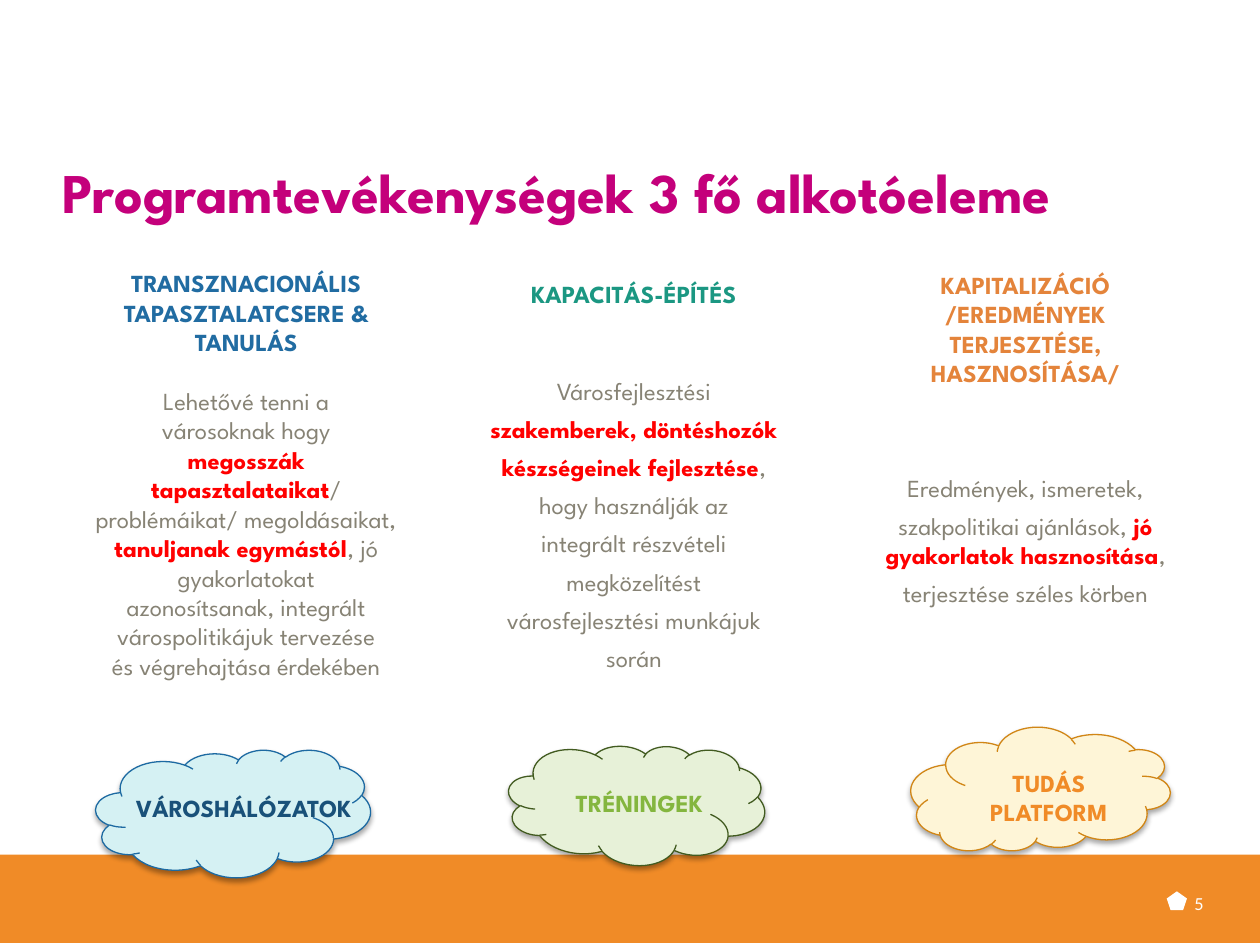
from typing import NamedTuple

from lxml import etree
from pptx import Presentation
from pptx.dml.color import RGBColor
from pptx.enum import shapes, text
from pptx.oxml import ns
from pptx.util import Cm, Pt

COLORS = {
    "orange": "F08B27", "white": "FFFFFF", "magenta": "C4007B",
    "grey": "878375", "red": "FF0000",
    "blue_head": "216CA2", "teal_head": "1B9782", "orange_head": "E4843B",
    "blue_fill": "D5F1F3", "blue_line": "1D6AA2", "blue_text": "195179",
    "green_fill": "E7F1D8", "green_line": "425B20", "green_text": "84B63F",
    "yellow_fill": "FEF5D7", "yellow_line": "D18616",
}
HEAD_FONT = "League Spartan"


class Box(NamedTuple):
    left: float
    top: float
    width: float
    height: float


class Column(NamedTuple):
    box: Box
    color: str
    heading: list[str]
    body: list[str]
    gap: float
    spacing: float


class Cloud(NamedTuple):
    box: Box
    rotation: float
    palette: str
    label_box: Box
    label: list[str]
    label_color: str
    wrap: bool


COLUMNS = [
    Column(Box(1.5, 5.28, 6.93, 9.75), "blue_head",
           ["TRANSZNACIONÁLIS", "TAPASZTALATCSERE &", "TANULÁS"],
           ["Lehetővé tenni a", "városoknak hogy", "*megosszák*",
            "*tapasztalataikat*/ problémáikat/ megoldásaikat,",
            "*tanuljanak egymástól*, jó", "gyakorlatokat",
            "azonosítsanak, integrált", "várospolitikájuk tervezése",
            "és végrehajtása érdekében"], 16.8, 0),
    Column(Box(9.4, 5.49, 6.76, 8.99), "teal_head",
           ["KAPACITÁS-ÉPÍTÉS"],
           ["Városfejlesztési", "*szakemberek, döntéshozók*",
            "*készségeinek fejlesztése*,", "hogy használják az",
            "integrált részvételi", "megközelítést",
            "városfejlesztési munkájuk", "során"], 38.6, 5),
    Column(Box(17.45, 5.31, 6.45, 9.17), "orange_head",
           ["KAPITALIZÁCIÓ", "/EREDMÉNYEK", "TERJESZTÉSE,", "HASZNOSÍTÁSA/"],
           ["Eredmények, ismeretek,",
            "szakpolitikai ajánlások, *jó gyakorlatok hasznosítása*,",
            "terjesztése széles körben"], 48.6, 5),
]

CLOUDS = [
    Cloud(Box(10.24, 14.99, 5.18, 2.44), 4.7, "green",
          Box(11.33, 15.75, 3.12, 0.86), ["TRÉNINGEK"], "green_text", False),
    Cloud(Box(18.36, 14.66, 5.23, 2.49), 180, "yellow",
          Box(19.1, 15.34, 4.09, 1.45), ["TUDÁS", "PLATFORM"], "orange", True),
    Cloud(Box(1.93, 15.11, 5.54, 2.57), 0, "blue",
          Box(2.36, 15.85, 5.11, 0.86), ["VÁROSHÁLÓZATOK"], "blue_text", False),
]


def rgb(name: str) -> RGBColor:
    return RGBColor.from_string(COLORS[name])


def place(box: Box) -> list[Cm]:
    return [Cm(v) for v in box]


def add_paragraph(tf, line: str, *, first: bool = False, size: float = 14,
                  font: str = HEAD_FONT, color: str = "grey", bold: bool = False,
                  align=text.PP_ALIGN.CENTER, before: float = 0) -> None:
    p = tf.paragraphs[0] if first else tf.add_paragraph()
    p.alignment = align
    p.space_before = Pt(before)
    for i, part in enumerate(line.split("*")):
        if part:
            marked = i % 2 == 1
            r = p.add_run()
            r.text = part
            r.font.size = Pt(size)
            r.font.name = font
            r.font.bold = bold or marked
            r.font.color.rgb = rgb("red" if marked else color)


def add_text(slide, box: Box, lines: list[str], *, wrap: bool = True,
             anchor=text.MSO_ANCHOR.TOP, insets=None, **fmt):
    tf = slide.shapes.add_textbox(*place(box)).text_frame
    tf.word_wrap = wrap
    tf.vertical_anchor = anchor
    if insets is not None:
        (tf.margin_left, tf.margin_top,
         tf.margin_right, tf.margin_bottom) = [Cm(v) for v in insets]
    for i, line in enumerate(lines):
        add_paragraph(tf, line, first=i == 0, **fmt)
    return tf


def add_shape(slide, kind, box: Box, fill: str, line: str | None = None):
    sp = slide.shapes.add_shape(kind, *place(box))
    sp.shadow.inherit = False
    sp.fill.solid()
    sp.fill.fore_color.rgb = rgb(fill)
    if line is None:
        sp.line.fill.background()
    else:
        sp.line.color.rgb = rgb(line)
        sp.line.width = Pt(0.75)
    return sp


def add_shadow(sp) -> None:
    effects = sp._element.spPr.find(ns.qn("a:effectLst"))
    shadow = etree.SubElement(effects, ns.qn("a:outerShdw"), blurRad=str(Pt(3.1)),
                              dist=str(Pt(1.8)), dir="5400000", rotWithShape="0")
    color = etree.SubElement(shadow, ns.qn("a:srgbClr"), val="000000")
    etree.SubElement(color, ns.qn("a:alpha"), val="35000")


def add_cloud(slide, cloud: Cloud) -> None:
    sp = add_shape(slide, shapes.MSO_SHAPE.CLOUD, cloud.box,
                   f"{cloud.palette}_fill", f"{cloud.palette}_line")
    sp.rotation = cloud.rotation
    add_shadow(sp)


def add_column(slide, column: Column) -> None:
    tf = add_text(slide, column.box, column.heading, color=column.color, bold=True)
    for i, line in enumerate(column.body):
        add_paragraph(tf, line, before=column.spacing if i else column.gap)


def main() -> None:
    prs = Presentation()
    prs.slide_width, prs.slide_height = Cm(25.4), Cm(19)
    s = prs.slides.add_slide(prs.slide_layouts[6])

    add_shape(s, shapes.MSO_SHAPE.RECTANGLE, Box(0, 17.22, 25.4, 1.78), "orange")
    add_shape(s, shapes.MSO_SHAPE.REGULAR_PENTAGON, Box(23.52, 17.96, 0.41, 0.38), "white")
    for cloud in CLOUDS:
        add_cloud(s, cloud)
    add_text(s, Box(24.08, 17.68, 1.02, 1.02), ["5"], size=10.5, font="Calibri",
             color="white", align=text.PP_ALIGN.LEFT,
             anchor=text.MSO_ANCHOR.MIDDLE, insets=(0, 0, 0, 0))
    add_text(s, Box(0.48, 3.05, 24.1, 1.47), ["Programtevékenységek 3 fő alkotóeleme"],
             size=32, color="magenta", bold=True, align=text.PP_ALIGN.LEFT,
             anchor=text.MSO_ANCHOR.BOTTOM, insets=(0.79, 0, 0, 0))
    for column in COLUMNS:
        add_column(s, column)
    for cloud in CLOUDS:
        add_text(s, cloud.label_box, cloud.label, wrap=cloud.wrap,
                 color=cloud.label_color, bold=True)

    prs.save("out.pptx")


if __name__ == "__main__":
    main()
